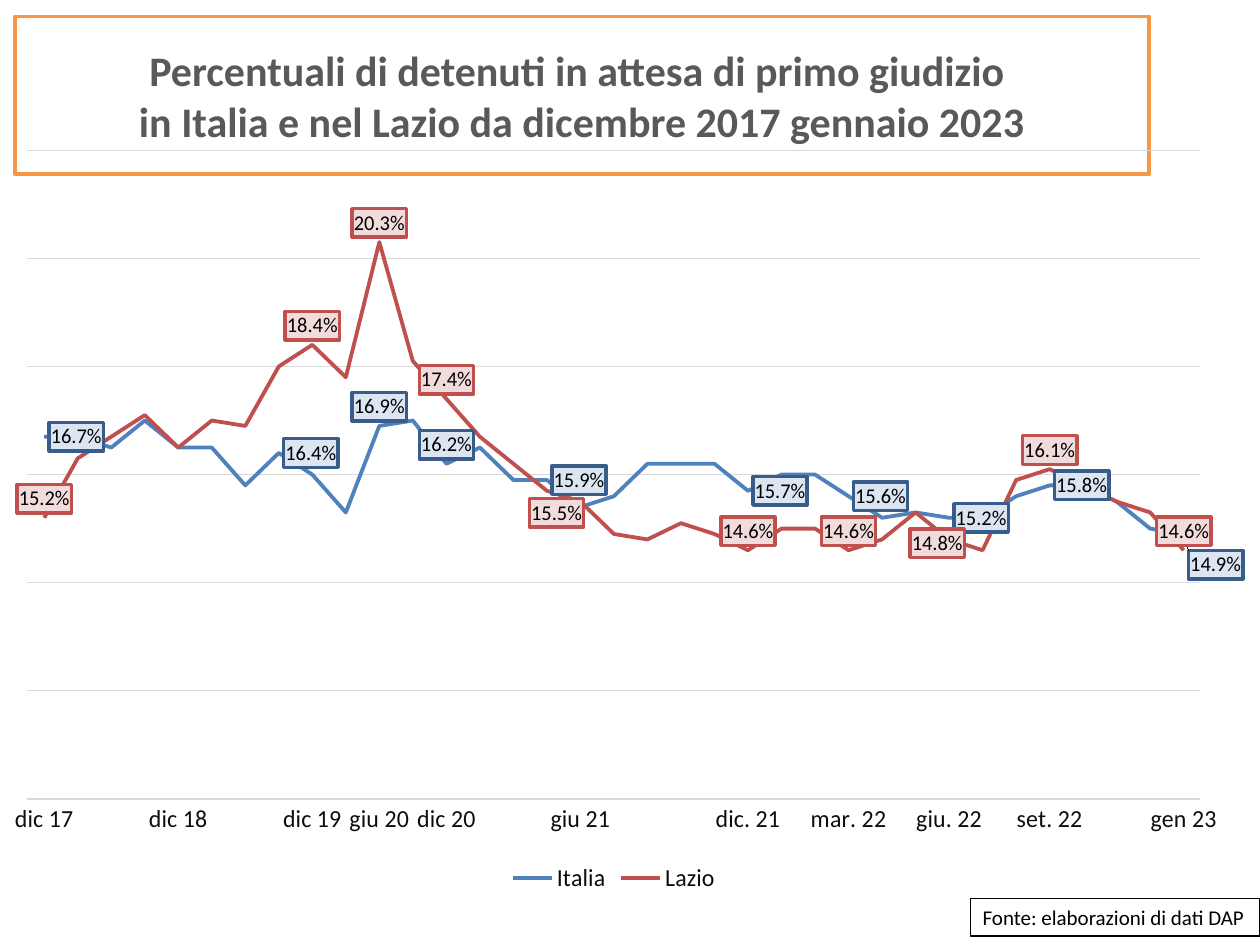
from lxml import etree
from pptx import Presentation
from pptx.chart.data import CategoryChartData
from pptx.dml.color import RGBColor
from pptx.enum.chart import XL_CHART_TYPE, XL_LEGEND_POSITION, XL_TICK_MARK
from pptx.enum.text import MSO_ANCHOR, PP_ALIGN
from pptx.oxml import parse_xml
from pptx.util import Cm, Pt

LINE = XL_CHART_TYPE.LINE
BOTTOM = XL_LEGEND_POSITION.BOTTOM
NO_TICK = XL_TICK_MARK.NONE
MIDDLE = MSO_ANCHOR.MIDDLE
CENTER, LEFT = PP_ALIGN.CENTER, PP_ALIGN.LEFT
FONT = "Calibri"
NS = ('xmlns:c="http://schemas.openxmlformats.org/drawingml/2006/chart" '
      'xmlns:a="http://schemas.openxmlformats.org/drawingml/2006/main"')

TITLE = ("Percentuali di detenuti in attesa di primo giudizio \v"
         "in Italia e nel Lazio da dicembre 2017 gennaio 2023")
SOURCE = "Fonte: elaborazioni di dati DAP"
COUNT = 35
DATES = {0: "gen 23", 4: "set. 22", 7: "giu. 22", 10: "mar. 22", 13: "dic. 21",
         18: "giu 21", 22: "dic 20", 24: "giu 20", 26: "dic 19",
         30: "dic 18", 34: "dic 17"}
SERIES = [
    {"name": "Italia", "color": "4F81BD", "fill": "DCE6F2", "edge": "385D8A",
     "vals": [14.9, 15, 15.5, 15.8, 15.8, 15.6, 15.2, 15.2, 15.3, 15.2, 15.6, 16,
              16, 15.7, 16.2, 16.2, 16.2, 15.6, 15.4, 15.9, 15.9, 16.5, 16.2, 17,
              16.9, 15.3, 16, 16.4, 15.8, 16.5, 16.5, 17, 16.5, 16.7, 16.7],
     "spot": "r", "tags": [0, 4, 7, 10, 13, 19, 22, 24, 27, 34],
     "top": [22, 24], "shift": {0: (0, 0.04)}},
    {"name": "Lazio", "color": "C0504D", "fill": "F2DCDB", "edge": "C0504D",
     "vals": [14.6, 15.3, 15.5, 15.8, 16.1, 15.9, 14.6, 14.8, 15.3, 14.8, 14.6, 15,
              15, 14.6, 14.9, 15.1, 14.8, 14.9, 15.5, 15.7, 16.2, 16.7, 17.4, 18.1,
              20.3, 17.8, 18.4, 18, 16.9, 17, 16.5, 17.1, 16.7, 16.3, 15.2],
     "spot": "t", "tags": [0, 4, 7, 10, 13, 18, 22, 24, 26, 34],
     "top": [], "shift": {7: (-0.01, 0.03), 18: (-0.02, 0.04)}},
]


def rgb(code):
    return RGBColor.from_string(code)


def style(font, size, color, bold=False):
    font.name, font.size, font.bold = FONT, Pt(size), bold
    font.color.rgb = rgb(color)


def stroke(line, color, width):
    line.color.rgb = rgb(color)
    line.width = Pt(width)


def add_box(slide, text, place, edge, width, size, color, bold, align, wrap):
    box = slide.shapes.add_textbox(*[Cm(n) for n in place])
    box.fill.solid()
    box.fill.fore_color.rgb = rgb("FFFFFF")
    stroke(box.line, edge, width)
    frame = box.text_frame
    frame.word_wrap = wrap
    frame.vertical_anchor = MIDDLE
    frame.text = text
    par = frame.paragraphs[0]
    par.alignment = align
    style(par.font, size, color, bold)


def flags(on):
    keys = ("LegendKey", "Val", "CatName", "SerName", "Percent", "BubbleSize")
    return "".join(f'<c:show{k} val="{int(on and k == "Val")}"/>' for k in keys)


def tag(row, idx):
    spot = "t" if idx in row["top"] else row["spot"]
    move = ""
    if idx in row["shift"]:
        x, y = row["shift"][idx]
        move = (f'<c:layout><c:manualLayout><c:x val="{x}"/><c:y val="{y}"/>'
                '</c:manualLayout></c:layout>')
    return (f'<c:dLbl><c:idx val="{idx}"/>{move}'
            '<c:numFmt formatCode="0.0%" sourceLinked="0"/>'
            f'<c:spPr><a:solidFill><a:srgbClr val="{row["fill"]}"/></a:solidFill>'
            f'<a:ln w="{Pt(2)}"><a:solidFill><a:srgbClr val="{row["edge"]}"/>'
            '</a:solidFill></a:ln></c:spPr>'
            '<c:txPr><a:bodyPr/><a:p><a:pPr><a:defRPr sz="1200" b="0"><a:solidFill>'
            '<a:srgbClr val="000000"/></a:solidFill>'
            f'<a:latin typeface="{FONT}"/></a:defRPr></a:pPr></a:p></c:txPr>'
            f'<c:dLblPos val="{spot}"/>{flags(True)}</c:dLbl>')


def add_tags(line, row):
    body = "".join(tag(row, idx) for idx in row["tags"])
    node = line._element.get_or_add_dLbls()
    line._element.replace(
        node, parse_xml(f"<c:dLbls {NS}>{body}{flags(False)}</c:dLbls>"))


def set_plot(chart, x, y, w, h):
    area = chart._chartSpace.chart.plotArea
    for old in area.xpath("c:layout"):
        area.remove(old)
    sizes = "".join(f'<c:{k} val="{v}"/>' for k, v in zip("xywh", (x, y, w, h)))
    area.insert(0, parse_xml(
        f'<c:layout {NS}><c:manualLayout><c:layoutTarget val="inner"/>'
        '<c:xMode val="edge"/><c:yMode val="edge"/>'
        f'{sizes}</c:manualLayout></c:layout>'))


def add_lines(slide):
    data = CategoryChartData(number_format="0.0%")
    data.categories = [DATES.get(i, "") for i in range(COUNT)]
    for row in SERIES:
        data.add_series(row["name"], [round(v / 100, 3) for v in row["vals"]])
    chart = slide.shapes.add_chart(
        LINE, Cm(0.3), Cm(2.72), Cm(24.79), Cm(15.39), data).chart
    chart.has_title = False
    style(chart.font, 14, "0D0D0D")
    chart.has_legend = True
    chart.legend.position = BOTTOM
    chart.legend.include_in_layout = False
    style(chart.legend.font, 14, "0D0D0D")
    dates, rates = chart.category_axis, chart.value_axis
    dates.reverse_order = True
    dates.major_tick_mark = NO_TICK
    style(dates.tick_labels.font, 14, "0D0D0D")
    stroke(dates.format.line, "D9D9D9", 0.75)
    skip = etree.Element(dates._element.tag.replace("catAx", "tickLblSkip"), val="1")
    dates._element.xpath("c:noMultiLvlLbl")[0].addprevious(skip)
    rates.minimum_scale, rates.maximum_scale, rates.major_unit = 0.1, 0.22, 0.02
    rates.has_major_gridlines = True
    stroke(rates.major_gridlines.format.line, "D9D9D9", 0.75)
    rates.visible = False
    for line, row in zip(chart.plots[0].series, SERIES):
        line.smooth = False
        stroke(line.format.line, row["color"], 2.25)
        add_tags(line, row)
    chart.plots[0].vary_by_categories = False
    set_plot(chart, 0.01, 0.02, 0.98, 0.85)


def main():
    deck = Presentation()
    deck.slide_width, deck.slide_height = Cm(25.4), Cm(19.05)
    slide = deck.slides.add_slide(deck.slide_layouts[6])
    add_box(slide, TITLE, (0.3, 0.33, 22.86, 3.18), "F79646", 2,
            24, "595959", True, CENTER, True)
    add_box(slide, SOURCE, (19.56, 18.11, 5.84, 0.76), "000000", 0.75,
            12, "000000", False, LEFT, False)
    add_lines(slide)
    deck.save("out.pptx")


if __name__ == "__main__":
    main()
